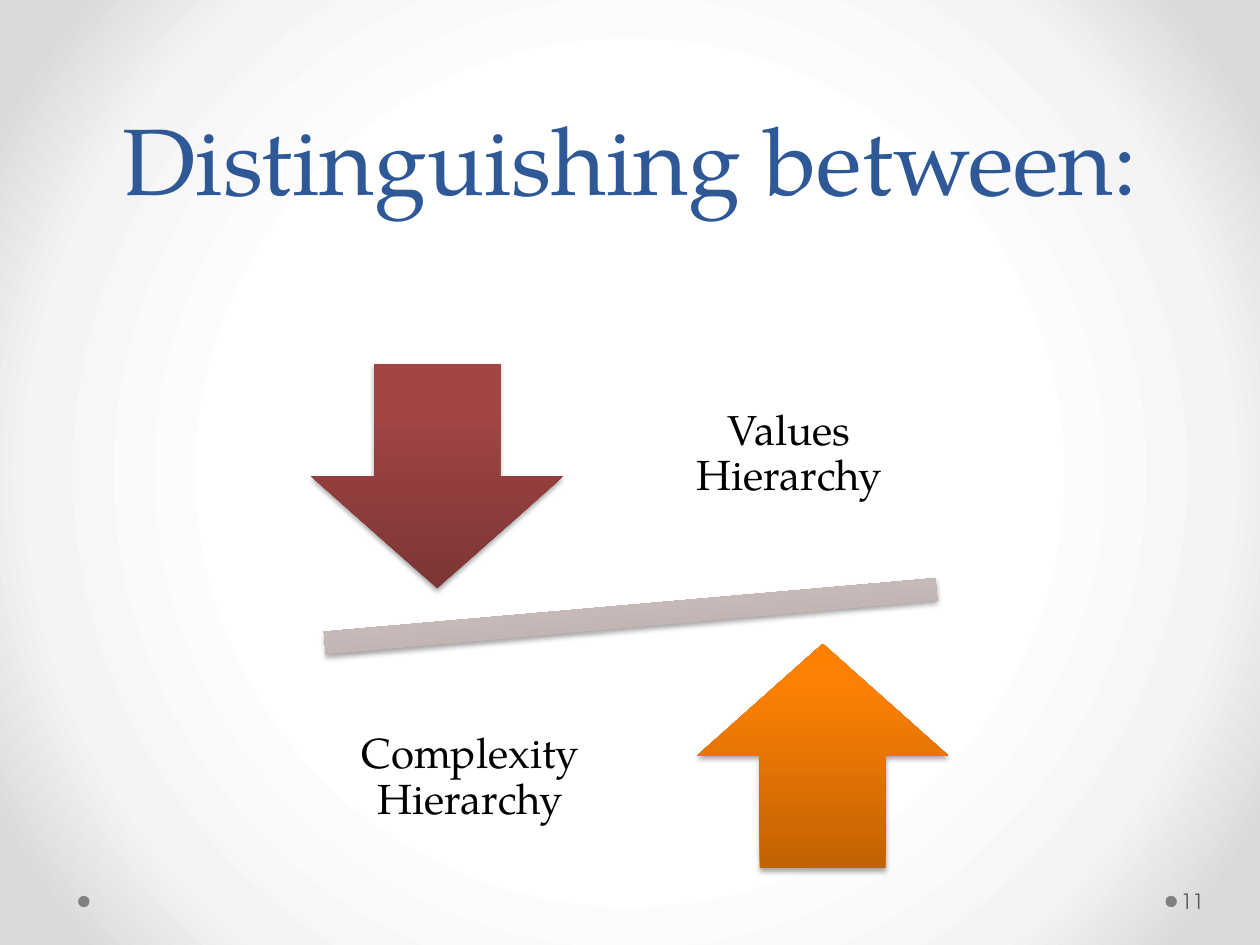
from dataclasses import dataclass

from lxml.etree import SubElement
from pptx import Presentation
from pptx.dml.color import RGBColor
from pptx.enum.shapes import MSO_SHAPE
from pptx.enum.text import MSO_ANCHOR, MSO_AUTO_SIZE, PP_ALIGN
from pptx.oxml.ns import qn
from pptx.util import Inches, Pt

Stops = tuple[tuple[int, str], ...]
Box = tuple[float, float, float, float]


@dataclass(frozen=True)
class Theme:
    serif: str = "TeX Gyre Pagella"
    sans: str = "TeX Gyre Adventor"
    title: str = "2F5897"
    label: str = "000000"
    number: str = "595959"
    dot: str = "808080"
    title_size: int = 54
    label_size: int = 24
    number_size: int = 12
    backdrop: Stops = ((50, "FFFFFF"), (76, "F4F4F4"), (92, "DADADA"))
    beam: Stops = ((0, "A79A9A"), (80, "D9C8C8"), (100, "DBC9C9"))
    red: Stops = ((0, "7D3535"), (80, "A24545"), (100, "A44343"))
    orange: Stops = ((0, "C26203"), (80, "FB8004"), (100, "FF8002"))


@dataclass(frozen=True)
class Block:
    kind: MSO_SHAPE
    box: Box
    stops: Stops
    rotation: float = 0


@dataclass(frozen=True)
class Label:
    text: str
    box: Box
    size: int
    font: str
    color: str
    align: PP_ALIGN
    insets: Box
    spacing: float = 1.0


THEME = Theme()
SHADOW = {"blurRad": Pt(3.1), "dist": Pt(1.8), "dir": 90 * 60000, "rotWithShape": 0}


def add_color(parent, tag: str, color: str, **attrs):
    el = SubElement(parent, qn(tag), {k: str(v) for k, v in attrs.items()})
    return SubElement(el, qn("a:srgbClr"), val=color)


def set_gradient(fill, holder, stops: Stops, radial: bool = False) -> None:
    fill.gradient()
    grad = next(holder.iter(qn("a:gradFill")))
    for child in list(grad):
        grad.remove(child)
    gs_lst = SubElement(grad, qn("a:gsLst"))
    for pos, color in stops:
        add_color(gs_lst, "a:gs", color, pos=pos * 1000)
    if radial:
        center = SubElement(grad, qn("a:path"), path="circle")
        SubElement(center, qn("a:fillToRect"), {side: "50000" for side in "ltrb"})
    else:
        SubElement(grad, qn("a:lin"), ang=str(270 * 60000), scaled="0")


def add_plain_shape(s, kind: MSO_SHAPE, box: Box):
    sp = s.shapes.add_shape(kind, *map(Inches, box))
    sp.shadow.inherit = False
    sp.line.fill.background()
    return sp


def add_block(s, block: Block) -> None:
    sp = add_plain_shape(s, block.kind, block.box)
    sp.rotation = block.rotation
    set_gradient(sp.fill, sp._element.spPr, block.stops)
    effects = sp._element.spPr.find(qn("a:effectLst"))
    color = add_color(effects, "a:outerShdw", "000000", **SHADOW)
    SubElement(color, qn("a:alpha"), val="35000")


def add_dot(s, left: float) -> None:
    sp = add_plain_shape(s, MSO_SHAPE.OVAL, (left, 7.11, 0.09, 0.09))
    sp.fill.solid()
    sp.fill.fore_color.rgb = RGBColor.from_string(THEME.dot)


def format_paragraph(p, font: str, size: int, color: str, align: PP_ALIGN) -> None:
    p.alignment = align
    p.font.name = font
    p.font.size = Pt(size)
    p.font.color.rgb = RGBColor.from_string(color)


def add_label(s, label: Label) -> None:
    tf = s.shapes.add_textbox(*map(Inches, label.box)).text_frame
    tf.word_wrap = True
    tf.vertical_anchor = MSO_ANCHOR.MIDDLE
    tf.margin_left, tf.margin_top, tf.margin_right, tf.margin_bottom = map(Inches, label.insets)
    p = tf.paragraphs[0]
    p.text = label.text
    p.line_spacing = label.spacing
    format_paragraph(p, label.font, label.size, label.color, label.align)


def add_title(s, text: str) -> None:
    title = s.shapes.title
    title.left, title.top, title.width, title.height = map(Inches, (0.5, 0, 9, 1.75))
    tf = title.text_frame
    tf.auto_size = MSO_AUTO_SIZE.NONE
    tf.vertical_anchor = MSO_ANCHOR.BOTTOM
    p = tf.paragraphs[0]
    p.text = text
    p.line_spacing = Pt(58)
    format_paragraph(p, THEME.serif, THEME.title_size, THEME.title, PP_ALIGN.CENTER)


def hierarchy(text: str, left: float, top: float) -> Label:
    return Label(text, (left, top, 2.13, 1.87), THEME.label_size, THEME.serif,
                 THEME.label, PP_ALIGN.CENTER, (0.19,) * 4, 0.9)


BLOCKS = (
    Block(MSO_SHAPE.MATH_MINUS, (1.69, 4.51, 6.63, 0.76), THEME.beam, 355),
    Block(MSO_SHAPE.DOWN_ARROW, (2.47, 2.89, 2, 1.78), THEME.red),
    Block(MSO_SHAPE.UP_ARROW, (5.53, 5.11, 2, 1.78), THEME.orange),
)
LABELS = (
    hierarchy("Values Hierarchy", 5.2, 2.67),
    hierarchy("Complexity Hierarchy", 2.67, 5.24),
    Label("11", (9.34, 6.95, 0.61, 0.4), THEME.number_size, THEME.sans,
          THEME.number, PP_ALIGN.LEFT, (0.03, 0.05, 0.05, 0.05)),
)


def main() -> None:
    prs = Presentation()
    prs.slide_width, prs.slide_height = Inches(10), Inches(7.5)
    s = prs.slides.add_slide(prs.slide_layouts[5])
    set_gradient(s.background.fill, s._element, THEME.backdrop, radial=True)
    add_title(s, "Distinguishing between:")
    for left in (9.25, 0.62):
        add_dot(s, left)
    for block in BLOCKS:
        add_block(s, block)
    for label in LABELS:
        add_label(s, label)
    prs.save("out.pptx")


if __name__ == "__main__":
    main()
